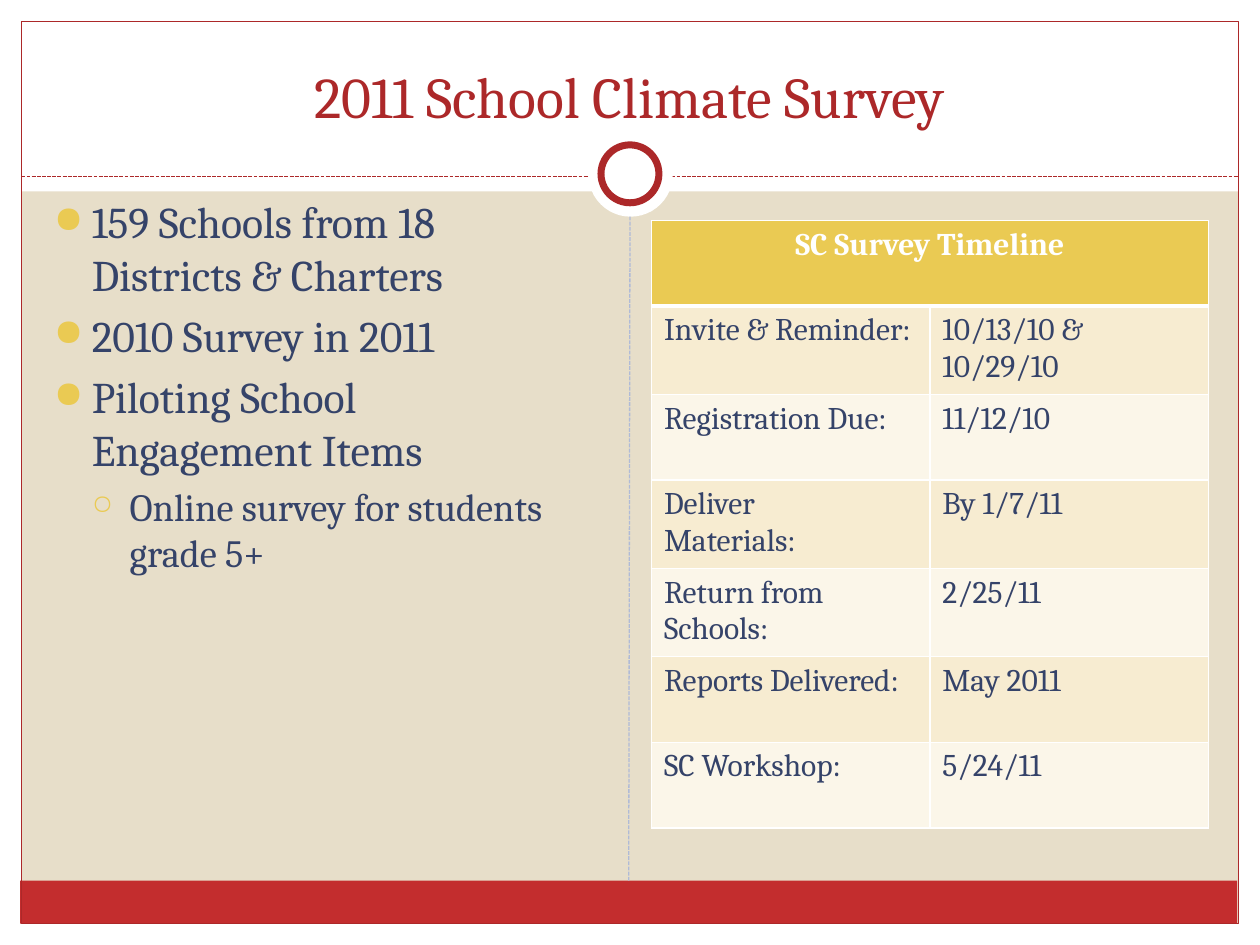
"""Build the School Climate Survey slide with its bullet list and timeline table."""
from typing import NamedTuple, Optional

from lxml.etree import SubElement
from pptx import Presentation
from pptx.dml.color import RGBColor
from pptx.enum.dml import MSO_LINE
from pptx.enum.shapes import MSO_CONNECTOR, MSO_SHAPE
from pptx.enum.text import MSO_ANCHOR, MSO_AUTO_SIZE, PP_ALIGN
from pptx.oxml.ns import qn
from pptx.util import Inches, Pt

WHITE = RGBColor(0xFF, 0xFF, 0xFF)
SAND = RGBColor(0xE7, 0xDE, 0xC9)
RED = RGBColor(0xC3, 0x2D, 0x2E)
DARK_RED = RGBColor(0xAC, 0x28, 0x29)
NAVY = RGBColor(0x35, 0x43, 0x69)
PALE_BLUE = RGBColor(0xAF, 0xBA, 0xD7)
GOLD = RGBColor(0xEA, 0xCA, 0x53)
BANDS = (RGBColor(0xF7, 0xEC, 0xD1), RGBColor(0xFB, 0xF6, 0xE9))
FONT = "Cambria"
INDENT = 0.3


class Panel(NamedTuple):
    left: float
    top: float
    width: float
    height: float
    fill: Optional[RGBColor] = WHITE
    line: Optional[RGBColor] = None
    weight: float = 0.75
    kind: MSO_SHAPE = MSO_SHAPE.RECTANGLE


class Bullet(NamedTuple):
    text: str
    level: int = 0


class BulletStyle(NamedTuple):
    symbol: str
    percent: int
    size: int


MARGINS = (
    Panel(0, 7.33, 10, 0.17),
    Panel(0, 0, 10, 1.52),
    Panel(0, 0, 0.17, 7.5),
    Panel(9.83, 0, 0.17, 7.5),
)
FOOTER = Panel(0.16, 6.99, 9.66, 0.34, RED)
FRAME = Panel(0.17, 0.17, 9.66, 7.16, None, DARK_RED)
RINGS = (
    Panel(4.67, 1.05, 0.67, 0.67, kind=MSO_SHAPE.OVAL),
    Panel(4.77, 1.15, 0.46, 0.46, WHITE, DARK_RED, 4, MSO_SHAPE.OVAL),
)
BULLET_STYLES = (BulletStyle("●", 85, 25), BulletStyle("○", 70, 22))
BULLETS = (
    Bullet("159 Schools from 18 Districts & Charters"),
    Bullet("2010 Survey in 2011"),
    Bullet("Piloting School Engagement Items"),
    Bullet("Online survey for students grade 5+", 1),
)
TIMELINE = (
    ("Invite & Reminder:", "10/13/10 &\n10/29/10"),
    ("Registration Due:", "11/12/10"),
    ("Deliver\nMaterials:", "By 1/7/11"),
    ("Return from Schools:", "2/25/11"),
    ("Reports Delivered:", "May 2011"),
    ("SC Workshop:", "5/24/11"),
)


def style_font(font, size: float, color: RGBColor, bold: bool = False) -> None:
    font.name, font.size, font.bold = FONT, Pt(size), bold
    font.color.rgb = color


def add_panel(slide, panel: Panel):
    shape = slide.shapes.add_shape(panel.kind, *map(Inches, panel[:4]))
    shape.shadow.inherit = False
    if panel.fill is None:
        shape.fill.background()
    else:
        shape.fill.solid()
        shape.fill.fore_color.rgb = panel.fill
    if panel.line is None:
        shape.line.fill.background()
    else:
        shape.line.color.rgb = panel.line
        shape.line.width = Pt(panel.weight)
    return shape


def add_dashed_line(slide, start: tuple, end: tuple, color: RGBColor):
    connector = slide.shapes.add_connector(
        MSO_CONNECTOR.STRAIGHT, *map(Inches, start + end))
    connector.line.color.rgb = color
    connector.line.width = Pt(0.75)
    connector.line.dash_style = MSO_LINE.SQUARE_DOT
    SubElement(connector.element.spPr, qn("a:effectLst"))
    return connector


def place_title(slide, text: str) -> None:
    title = slide.shapes.title
    title.left, title.top, title.width, title.height = map(
        Inches, (0.33, 0.25, 9.33, 0.83))
    frame = title.text_frame
    frame.text = text
    frame.auto_size = MSO_AUTO_SIZE.NONE
    frame.vertical_anchor = MSO_ANCHOR.BOTTOM
    frame.paragraphs[0].alignment = PP_ALIGN.CENTER
    style_font(frame.paragraphs[0].font, 33, DARK_RED)
    title.element.getparent().append(title.element)


def add_bullets(slide, bullets: tuple) -> None:
    box = slide.shapes.add_textbox(*map(Inches, (0.33, 1.5, 4.42, 5.12)))
    frame = box.text_frame
    frame.word_wrap = True
    for index, bullet in enumerate(bullets):
        paragraph = frame.paragraphs[0] if index == 0 else frame.add_paragraph()
        style = BULLET_STYLES[bullet.level]
        paragraph.text = bullet.text
        paragraph.level = bullet.level
        paragraph.space_before = Pt(style.size * 0.2)
        style_font(paragraph.font, style.size, NAVY)
        properties = paragraph._p.get_or_add_pPr()
        properties.set("marL", str(Inches(INDENT * (bullet.level + 1))))
        properties.set("indent", str(-Inches(INDENT)))
        color = SubElement(properties, qn("a:buClr"))
        SubElement(color, qn("a:srgbClr"), val=str(GOLD))
        SubElement(properties, qn("a:buSzPct"), val=str(style.percent * 1000))
        SubElement(properties, qn("a:buChar"), char=style.symbol)
        properties.append(properties.find(qn("a:defRPr")))


def style_cell(cell, text: str, fill: RGBColor, header: bool = False) -> None:
    properties = cell._tc.get_or_add_tcPr()
    for side in ("lnL", "lnR", "lnT", "lnB"):
        weight = 3 if header and side == "lnB" else 1
        border = SubElement(properties, qn(f"a:{side}"), w=str(Pt(weight)))
        solid = SubElement(border, qn("a:solidFill"))
        SubElement(solid, qn("a:srgbClr"), val=str(WHITE))
    cell.fill.solid()
    cell.fill.fore_color.rgb = fill
    cell.text = text
    for paragraph in cell.text_frame.paragraphs:
        paragraph.alignment = PP_ALIGN.CENTER if header else PP_ALIGN.LEFT
        style_font(paragraph.font, 18, WHITE if header else NAVY, header)


def add_timeline(slide, heading: str, entries: tuple) -> None:
    row_count = len(entries) + 1
    row_height = 0.68
    table = slide.shapes.add_table(row_count, 2, *map(
        Inches, (5.17, 1.75, 4.42, row_height * row_count))).table
    style_cell(table.cell(0, 0), heading, GOLD, True)
    style_cell(table.cell(0, 1), "", GOLD, True)
    table.cell(0, 0).merge(table.cell(0, 1))
    for row, entry in enumerate(entries, 1):
        for column, text in enumerate(entry):
            style_cell(table.cell(row, column), text, BANDS[(row - 1) % 2])


def main() -> None:
    deck = Presentation()
    deck.slide_width, deck.slide_height = Inches(10), Inches(7.5)
    page = deck.slides.add_slide(deck.slide_layouts[5])
    page.background.fill.solid()
    page.background.fill.fore_color.rgb = SAND
    for margin in MARGINS:
        add_panel(page, margin)
    footer = add_panel(page, FOOTER)
    add_panel(page, FRAME)
    add_dashed_line(page, (0.17, 1.4), (9.83, 1.4), DARK_RED)
    for ring in RINGS:
        add_panel(page, ring)
    divider = add_dashed_line(page, (4.99, 6.99), (5, 1.72), PALE_BLUE)
    divider.begin_connect(footer, 0)
    place_title(page, "2011 School Climate Survey")
    add_bullets(page, BULLETS)
    add_timeline(page, "SC Survey Timeline", TIMELINE)
    deck.save("out.pptx")


if __name__ == "__main__":
    main()
